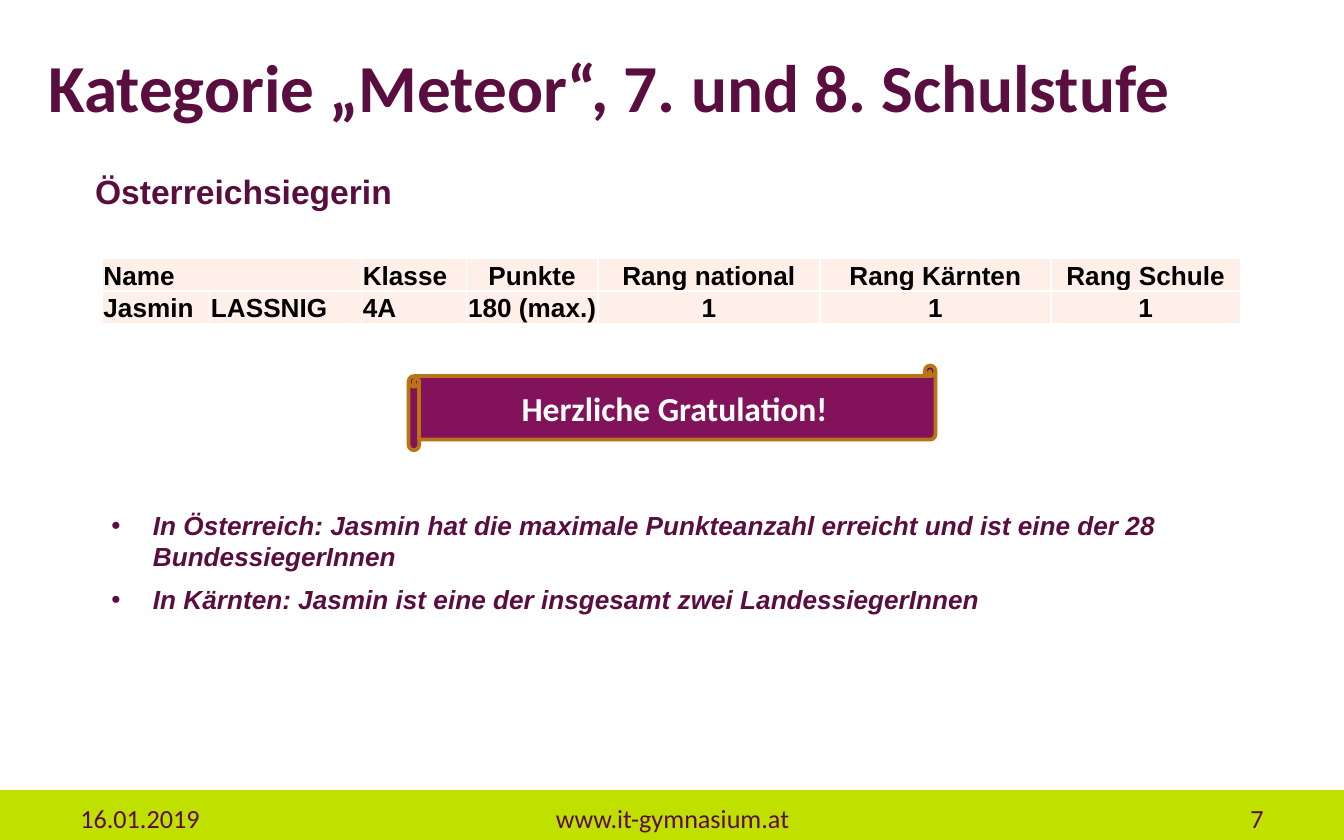
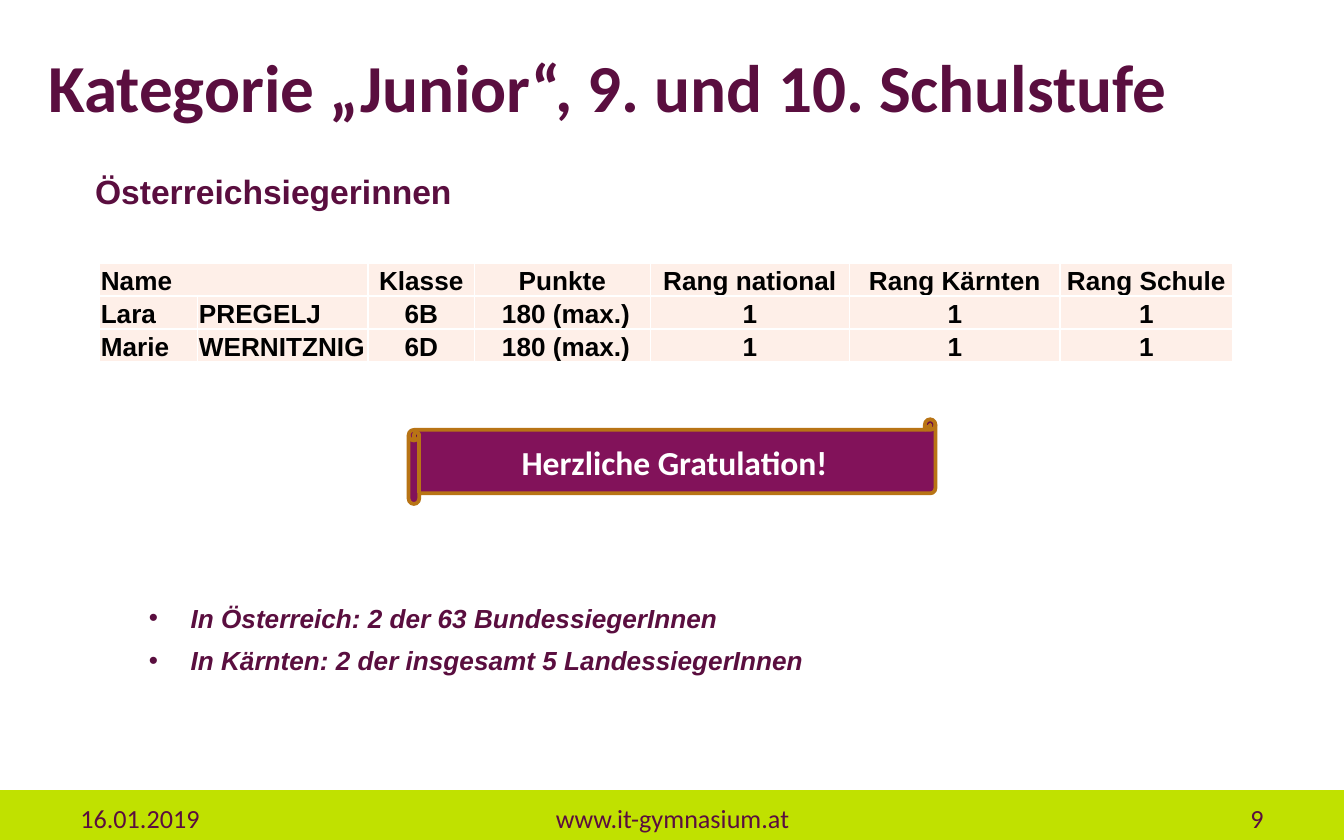
import dataclasses

import lxml.etree
import pptx
import pptx.dml.color
import pptx.enum.shapes
import pptx.enum.text
import pptx.oxml.ns
import pptx.util

Inches = pptx.util.Inches
Pt = pptx.util.Pt
Align = pptx.enum.text.PP_ALIGN
Anchor = pptx.enum.text.MSO_ANCHOR
Shapes = pptx.enum.shapes.MSO_SHAPE
qn = pptx.oxml.ns.qn


@dataclasses.dataclass(frozen=True)
class Theme:
    plum: str = "5A0E3F"
    scroll: str = "82125A"
    scroll_edge: str = "B87415"
    lime: str = "C0E100"
    cell: str = "FEEFE8"
    white: str = "FFFFFF"
    black: str = "000000"
    heading_font: str = "Calibri"
    body_font: str = "Arial"
    title_size: int = 36
    subtitle_size: int = 18
    text_size: int = 14


theme = Theme()
rgb = pptx.dml.color.RGBColor.from_string


def format_text(text_frame, font, size, color, bold=False, italic=False, align=Align.LEFT):
    for paragraph in text_frame.paragraphs:
        paragraph.alignment = align
        for run in paragraph.runs:
            run.font.name = font
            run.font.size = Pt(size)
            run.font.bold = bold
            run.font.italic = italic
            run.font.color.rgb = rgb(color)


def add_text(slide, box, text, anchor=Anchor.TOP, **style):
    text_box = slide.shapes.add_textbox(*[Inches(length) for length in box])
    text_frame = text_box.text_frame
    text_frame.word_wrap = True
    text_frame.vertical_anchor = anchor
    text_frame.text = text
    format_text(text_frame, color=theme.plum, **style)
    return text_frame


# Content of the two category slides
table_header = ["Name", "", "Klasse", "Punkte", "Rang national", "Rang Kärnten", "Rang Schule"]
row_height = 0.24
categories = [
    {
        "number": "7",
        "title": "Kategorie „Meteor“, 7. und 8. Schulstufe",
        "subtitle": "Österreichsiegerin",
        "table_at": (0.76, 1.92),
        "columns": [0.8, 1.13, 0.78, 0.98, 1.65, 1.72, 1.41],
        "left_columns": 3,
        "winners": [["Jasmin", "LASSNIG", "4A", "180 (max.)", "1", "1", "1"]],
        "scroll_top": 2.72,
        "notes_box": (0.73, 3.74, 8.54, 0.89),
        "notes": [
            "In Österreich: Jasmin hat die maximale Punkteanzahl erreicht "
            "und ist eine der 28 BundessiegerInnen",
            "In Kärnten: Jasmin ist eine der insgesamt zwei LandessiegerInnen",
        ],
    },
    {
        "number": "9",
        "title": "Kategorie „Junior“, 9. und 10. Schulstufe",
        "subtitle": "Österreichsiegerinnen",
        "table_at": (0.74, 1.96),
        "columns": [0.73, 1.27, 0.79, 1.31, 1.48, 1.57, 1.28],
        "left_columns": 2,
        "winners": [
            ["Lara", "PREGELJ", "6B", " 180 (max.)", "1", "1", "1"],
            ["Marie", "WERNITZNIG", "6D", " 180 (max.)", "1", "1", "1"],
        ],
        "scroll_top": 3.12,
        "notes_box": (1.01, 4.43, 8.28, 0.66),
        "notes": [
            "In Österreich: 2 der 63 BundessiegerInnen",
            "In Kärnten: 2 der insgesamt 5 LandessiegerInnen",
        ],
    },
]

presentation = pptx.Presentation()
presentation.slide_width = Inches(10)
presentation.slide_height = Inches(6.25)
blank_layout = presentation.slide_layouts[6]

for category in categories:
    slide = presentation.slides.add_slide(blank_layout)

    # Footer band with date, address and slide number
    band = slide.shapes.add_shape(
        Shapes.RECTANGLE, 0, Inches(5.88), Inches(10), Inches(0.37))
    band.shadow.inherit = False
    band.fill.solid()
    band.fill.fore_color.rgb = rgb(theme.lime)
    band.line.fill.background()
    for left, width, text, align in [
        (0.5, 2.33, "16.01.2019", Align.LEFT),
        (3.42, 3.17, "www.it-gymnasium.at", Align.CENTER),
        (7.17, 2.33, category["number"], Align.RIGHT),
    ]:
        add_text(slide, (left, 5.88, width, 0.37), text, Anchor.BOTTOM,
                 font=theme.heading_font, size=theme.text_size, align=align)

    # Bulleted notes
    notes = add_text(slide, category["notes_box"], "\n".join(category["notes"]),
                     font=theme.body_font, size=theme.text_size, bold=True, italic=True)
    notes.auto_size = pptx.enum.text.MSO_AUTO_SIZE.SHAPE_TO_FIT_TEXT
    for paragraph in notes.paragraphs:
        paragraph.space_after = Pt(6)
        properties = paragraph._p.get_or_add_pPr()
        properties.set("marL", str(Inches(0.31)))
        properties.set("indent", str(-Inches(0.31)))
        lxml.etree.SubElement(properties, qn("a:buFont"), typeface=theme.body_font)
        lxml.etree.SubElement(properties, qn("a:buChar"), char="•")

    # Results table
    rows = [table_header] + category["winners"]
    columns = category["columns"]
    left, top = category["table_at"]
    table = slide.shapes.add_table(
        len(rows), len(columns), Inches(left), Inches(top),
        Inches(sum(columns)), Inches(row_height * len(rows))).table
    for column, width in zip(table.columns, columns):
        column.width = Inches(width)
    for row in table.rows:
        row.height = Inches(row_height)
    table.cell(0, 0).merge(table.cell(0, 1))
    for row_index, row in enumerate(rows):
        for column_index, text in enumerate(row):
            cell = table.cell(row_index, column_index)
            cell.margin_left = cell.margin_right = cell.margin_top = Inches(0.01)
            cell.margin_bottom = 0
            cell.vertical_anchor = Anchor.BOTTOM
            cell.fill.solid()
            cell.fill.fore_color.rgb = rgb(theme.cell)
            cell.text_frame.text = text
            is_left = column_index < category["left_columns"]
            format_text(cell.text_frame, theme.body_font, theme.text_size, theme.black,
                        bold=True, align=Align.LEFT if is_left else Align.CENTER)
            cell_properties = cell._tc.get_or_add_tcPr()
            for position, side in enumerate(["lnL", "lnR", "lnT", "lnB"]):
                border = lxml.etree.Element(qn("a:" + side), w=str(Pt(1)))
                border_fill = lxml.etree.SubElement(border, qn("a:solidFill"))
                lxml.etree.SubElement(border_fill, qn("a:srgbClr"), val=theme.white)
                cell_properties.insert(position, border)

    # Title and subtitle
    add_text(slide, (0.26, 0.08, 9.49, 1.11), category["title"], Anchor.MIDDLE,
             font=theme.heading_font, size=theme.title_size, bold=True)
    subtitle = add_text(slide, (0.61, 1.22, 3.73, 0.4), category["subtitle"],
                        font=theme.body_font, size=theme.subtitle_size, bold=True)
    subtitle.auto_size = pptx.enum.text.MSO_AUTO_SIZE.SHAPE_TO_FIT_TEXT

    # Congratulation scroll
    scroll = slide.shapes.add_shape(
        Shapes.HORIZONTAL_SCROLL, Inches(3.04), Inches(category["scroll_top"]),
        Inches(3.92), Inches(0.63))
    scroll.shadow.inherit = False
    scroll.fill.solid()
    scroll.fill.fore_color.rgb = rgb(theme.scroll)
    scroll.line.color.rgb = rgb(theme.scroll_edge)
    scroll.line.width = Pt(2)
    scroll.text_frame.text = "Herzliche Gratulation!"
    scroll.text_frame.vertical_anchor = Anchor.MIDDLE
    format_text(scroll.text_frame, theme.heading_font, theme.subtitle_size, theme.white,
                bold=True, align=Align.CENTER)

presentation.save("out.pptx")
